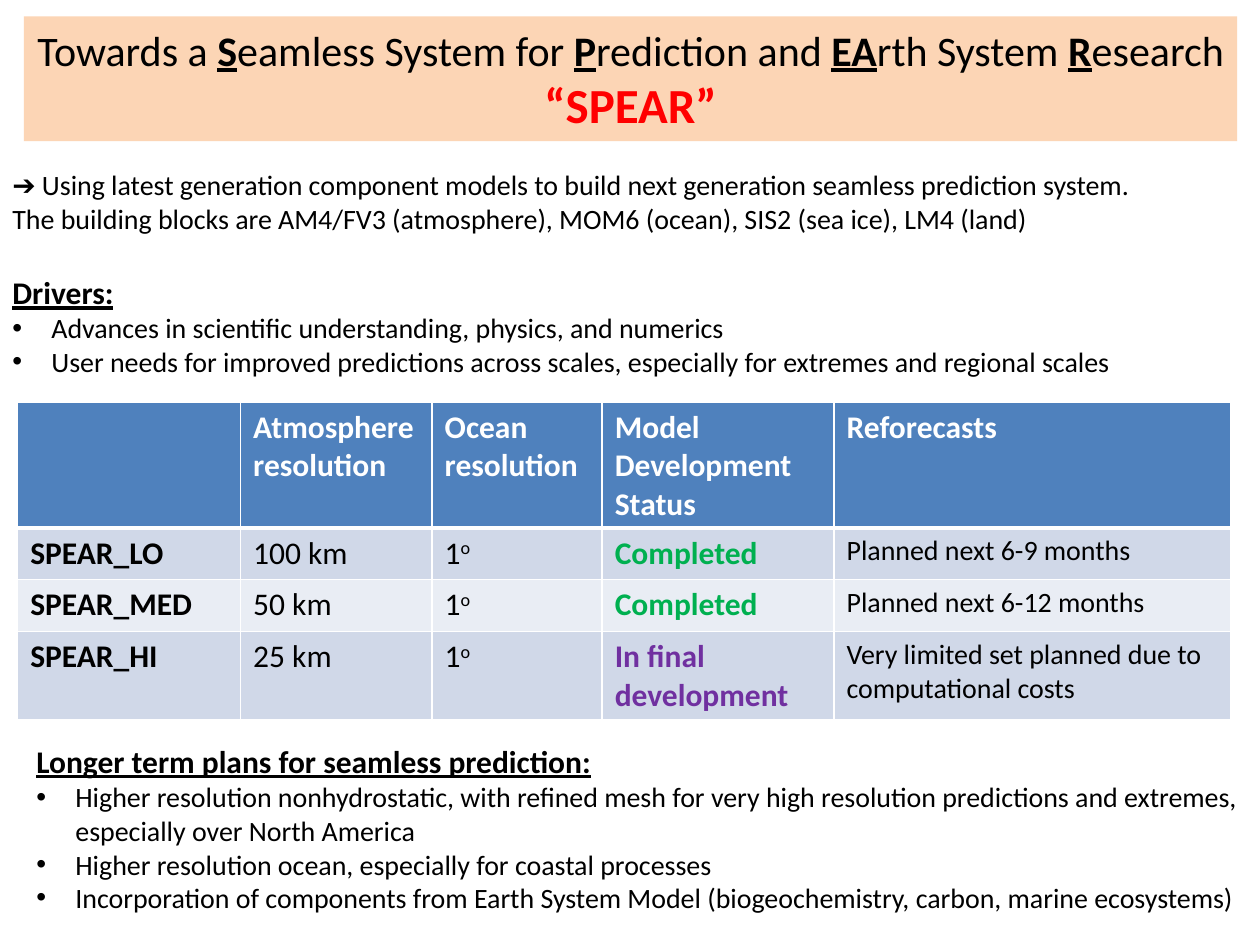
from dataclasses import dataclass

from lxml import etree
from pptx import Presentation
from pptx import util as u
from pptx.dml.color import RGBColor
from pptx.enum import shapes, text
from pptx.oxml import ns


@dataclass(frozen=True)
class Theme:
    """Colours, font and type sizes of the slide."""
    font: str = "Calibri"
    black: str = "000000"
    white: str = "FFFFFF"
    red: str = "FF0000"
    green: str = "00B050"
    purple: str = "7030A0"
    banner: str = "FCD5B5"
    header: str = "4F81BD"
    bands: tuple = ("D0D8E8", "E9EDF4")
    emphasis: int = 28
    title: int = 24
    heading: int = 18
    body: int = 16


THEME = Theme()
STRONG = {"bold": True, "underline": True}
HEADING = {"size": THEME.heading, **STRONG}


def add_run(paragraph, content, color=THEME.black, size=THEME.body, baseline=0, **formats):
    """Add one formatted run to a paragraph."""
    run = paragraph.add_run()
    run.text = content
    values = {"name": THEME.font, "size": u.Pt(size), **formats}
    for name, value in values.items():
        setattr(run.font, name, value)
    run.font.color.rgb = RGBColor.from_string(color)
    if baseline:
        run.font._element.set("baseline", str(baseline * 1000))


def add_bullet(paragraph):
    """Give a paragraph a hanging round bullet."""
    properties = paragraph._p.get_or_add_pPr()
    indent = u.Inches(0.31)
    properties.set("marL", str(indent))
    properties.set("indent", str(-indent))
    font = etree.SubElement(properties, ns.qn("a:buFont"))
    font.set("typeface", "Arial")
    etree.SubElement(properties, ns.qn("a:buChar")).set("char", "•")


def add_banner(slide, box):
    """Place the title banner with its underlined initials."""
    shape = slide.shapes.add_shape(shapes.MSO_SHAPE.RECTANGLE, *map(u.Inches, box))
    shape.shadow.inherit = False
    shape.fill.solid()
    shape.fill.fore_color.rgb = RGBColor.from_string(THEME.banner)
    shape.line.fill.background()
    frame = shape.text_frame
    settings = {"word_wrap": True, "vertical_anchor": text.MSO_ANCHOR.MIDDLE,
                "margin_left": u.Inches(0.05), "margin_right": u.Inches(0.05)}
    for name, value in settings.items():
        setattr(frame, name, value)
    paragraph = frame.paragraphs[0]
    paragraph.alignment = text.PP_ALIGN.CENTER
    pieces = ("Towards a ", "S", "eamless System for ", "P", "rediction and ",
              "EA", "rth System ", "R", "esearch")
    for index, piece in enumerate(pieces):
        add_run(paragraph, piece, size=THEME.title, **(STRONG if index % 2 else {}))
    paragraph.add_line_break()
    add_run(paragraph, "“SPEAR”", THEME.red, THEME.emphasis, bold=True)


def add_notes_box(slide, box, heading, bullets, intro=()):
    """Place optional opening lines, a heading and its bullets."""
    frame = slide.shapes.add_textbox(*map(u.Inches, box)).text_frame
    frame.word_wrap = True
    lines = [(line, {}, False) for line in intro]
    lines.append((heading, HEADING, False))
    lines += [(line, {}, True) for line in bullets]
    for index, (line, formats, bulleted) in enumerate(lines):
        paragraph = frame.add_paragraph() if index else frame.paragraphs[0]
        if intro and line == heading:
            paragraph.space_before = u.Pt(22)
        if bulleted:
            add_bullet(paragraph)
        add_run(paragraph, line, **formats)


def style_cell(cell, fill, top, bottom):
    """Fill a cell and draw its white borders."""
    cell.fill.solid()
    cell.fill.fore_color.rgb = RGBColor.from_string(fill)
    properties = cell._tc.get_or_add_tcPr()
    widths = {"lnL": 1, "lnR": 1, "lnT": top, "lnB": bottom}
    for index, (side, width) in enumerate(widths.items()):
        line = etree.Element(ns.qn(f"a:{side}"), w=str(u.Pt(width)))
        solid = etree.SubElement(line, ns.qn("a:solidFill"))
        etree.SubElement(solid, ns.qn("a:srgbClr")).set("val", THEME.white)
        properties.insert(index, line)


def add_model_table(slide, box):
    """Place the table of model versions."""
    headers = ("", "Atmosphere resolution", "Ocean resolution",
               "Model Development\nStatus", "Reforecasts")
    models = (
        ("SPEAR_LO", "100 km", "Completed", THEME.green, "Planned next 6-9 months"),
        ("SPEAR_MED", "50 km", "Completed", THEME.green, "Planned next 6-12 months"),
        ("SPEAR_HI", "25 km", "In final development", THEME.purple,
         "Very limited set planned due to computational costs"),
    )
    large = {"size": THEME.heading}
    bold = {**large, "bold": True}
    rows = [[[(header, {**bold, "color": THEME.white})] for header in headers]]
    for name, atmosphere, status, color, reforecast in models:
        rows.append([[(name, bold)], [(atmosphere, large)],
                     [("1", large), ("o", {**large, "baseline": 30})],
                     [(status, {**bold, "color": color})],
                     [(reforecast, {"bold": False})]])
    table = slide.shapes.add_table(len(rows), len(headers), *map(u.Inches, box)).table
    for column, width in zip(table.columns, (1.77, 1.52, 1.35, 1.84, 3.15)):
        column.width = u.Inches(width)
    for row, height in zip(table.rows, (0.99, 0.41, 0.41, 0.7)):
        row.height = u.Inches(height)
    for row_index, row in enumerate(rows):
        fill = THEME.bands[(row_index - 1) % 2] if row_index else THEME.header
        for column_index, runs in enumerate(row):
            cell = table.cell(row_index, column_index)
            style_cell(cell, fill, 3 if row_index == 1 else 1, 1 if row_index else 3)
            frame = cell.text_frame
            for content, formats in runs:
                for line_index, line in enumerate(content.split("\n")):
                    paragraph = frame.add_paragraph() if line_index else frame.paragraphs[0]
                    if line:
                        add_run(paragraph, line, **formats)


def main():
    """Build and save the slide."""
    presentation = Presentation()
    presentation.slide_width = u.Inches(10)
    presentation.slide_height = u.Inches(7.5)
    slide = presentation.slides.add_slide(presentation.slide_layouts[6])
    add_banner(slide, (0.19, 0.13, 9.63, 0.99))
    add_notes_box(
        slide, (0, 1.28, 9.24, 2.09), "Drivers:",
        ("Advances in scientific understanding, physics, and numerics",
         "User needs for improved predictions across scales, especially for extremes and regional scales"),
        ("➔ Using latest generation component models to build next generation seamless prediction system.",
         "The building blocks are AM4/FV3 (atmosphere), MOM6 (ocean), SIS2 (sea ice), LM4 (land)"))
    add_model_table(slide, (0.14, 3.19, 9.63, 2.51))
    add_notes_box(
        slide, (0.19, 5.84, 9.81, 1.78), "Longer term plans for seamless prediction:",
        ("Higher resolution nonhydrostatic, with refined mesh for very high resolution predictions "
         "and extremes, especially over North America",
         "Higher resolution ocean, especially for coastal processes",
         "Incorporation of components from Earth System Model (biogeochemistry, carbon, marine ecosystems)"))
    presentation.save("out.pptx")


if __name__ == "__main__":
    main()
